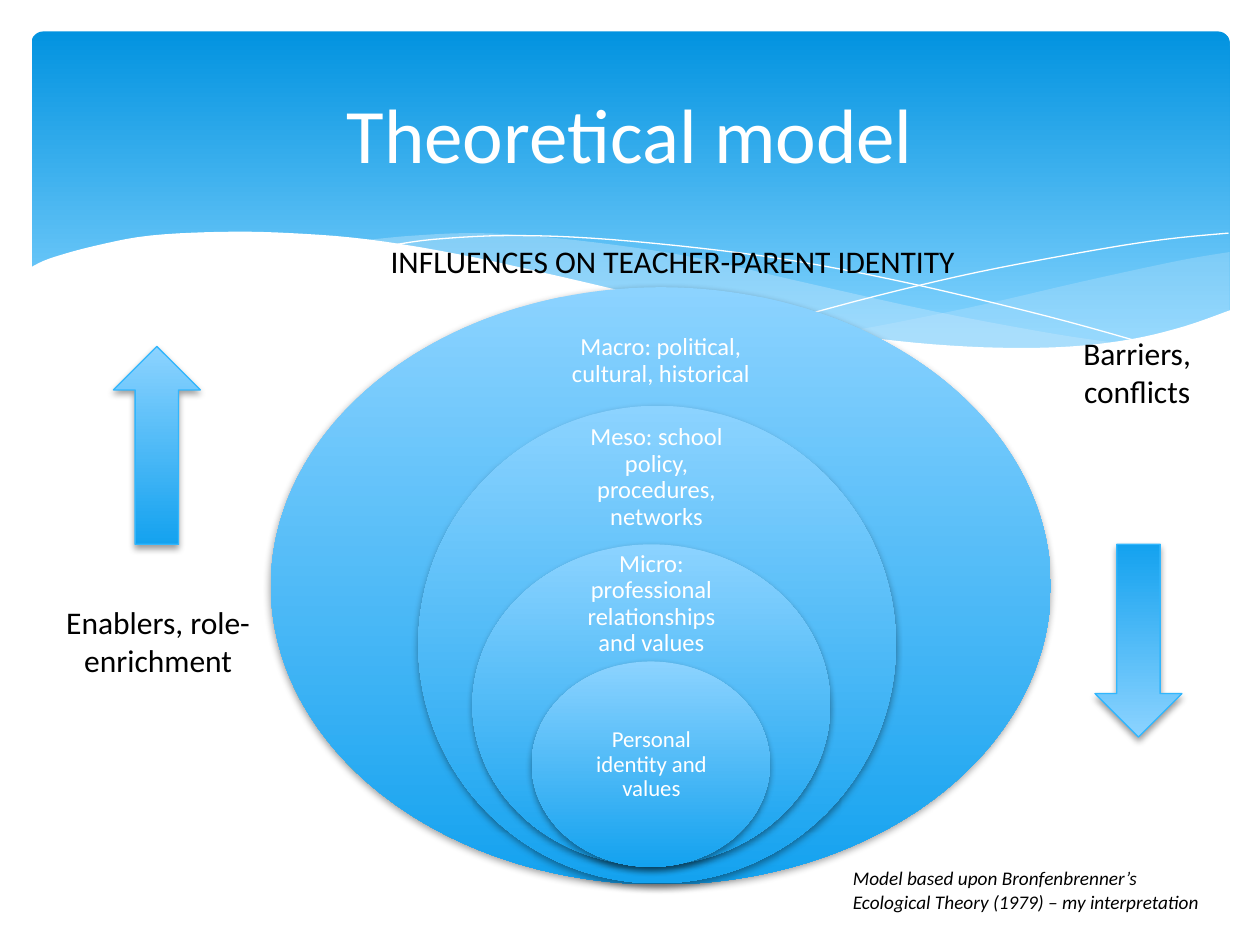
from lxml.etree import SubElement
from pptx import Presentation
from pptx.dml.color import RGBColor
from pptx.enum.shapes import MSO_SHAPE as SHAPE
from pptx.enum.text import MSO_ANCHOR as ANCHOR, PP_ALIGN as ALIGN
from pptx.oxml.ns import qn
from pptx.util import Inches, Pt

LIGHT, DARK, PALE, WHITE, BLACK = "8CD3FF", "14A2EF", "C6E7FC", "FFFFFF", "000000"

VEIL_TOP = [(9.76, 2), (9.35, 2.07), (8.61, 2.23), (7.79, 2.42), (7.06, 2.57), (6.61, 2.65)]
VEIL_BOTTOM = [(6.61, 2.65), (7.05, 2.71), (7.57, 2.76), (8.14, 2.78), (8.63, 2.75),
               (9.13, 2.67), (9.49, 2.57), (9.76, 2.47)]
BAND_TOP = [(8.93, 2.73), (8.37, 2.65), (7.41, 2.47), (6.29, 2.22), (5.69, 2.08),
            (5.14, 1.98), (4.42, 1.89), (3.8, 1.85), (3.28, 1.87), (2.86, 1.91)]
BAND_BOTTOM = [(2.86, 1.91), (3.42, 1.99), (4.04, 2.11), (4.91, 2.32), (5.66, 2.48),
               (6.34, 2.61), (7.09, 2.72), (7.73, 2.77), (8.28, 2.78), (8.93, 2.73)]
FALLING = [(3.09, 1.95), (3.44, 1.9), (4.01, 1.87), (4.69, 1.89), (5.56, 1.97),
           (6.36, 2.08), (7.27, 2.26), (8.31, 2.51), (9.07, 2.72)]
RISING = [(6.13, 2.57), (6.95, 2.35), (7.76, 2.16), (8.66, 1.99), (9.24, 1.9), (9.75, 1.85)]
WAVE = [(9.77, 2.46), (9.4, 2.59), (8.99, 2.69), (8.5, 2.75), (7.93, 2.76), (7.26, 2.72),
        (6.48, 2.62), (5.55, 2.45), (4.47, 2.2), (3.65, 2.02), (2.92, 1.9), (2.3, 1.85),
        (1.77, 1.84), (1.19, 1.87), (0.76, 1.95), (0.4, 2.05), (0.23, 2.13)]


def color(value):
    return RGBColor.from_string(value)


def box(left, top, width, height):
    return [Inches(v) for v in (left, top, width, height)]


def smooth(knots, steps=5):
    ends = [knots[0], *knots, knots[-1]]
    points = [knots[0]]
    for a, b, c, d in zip(ends, ends[1:], ends[2:], ends[3:]):
        for t in (n / steps for n in range(1, steps + 1)):
            points.append(tuple(
                (2 * q + (r - p) * t + (2 * p - 5 * q + 4 * r - s) * t ** 2
                 + (3 * q - p - 3 * r + s) * t ** 3) / 2
                for p, q, r, s in zip(a, b, c, d)))
    return points


def add_path(slide, points, fill=None, alpha=100):
    start, *rest = [(Inches(x), Inches(y)) for x, y in points]
    builder = slide.shapes.build_freeform(*start)
    builder.add_line_segments(rest, close=fill is not None)
    sp = builder.convert_to_shape()
    sp.shadow.inherit = False
    if fill is None:
        sp.fill.background()
        sp.line.color.rgb = color(WHITE)
        sp.line.width = 0
        return
    sp.fill.solid()
    sp.fill.fore_color.rgb = color(fill)
    sp.line.fill.background()
    if alpha < 100:
        rgb = sp._element.spPr.find(f"{qn('a:solidFill')}/{qn('a:srgbClr')}")
        SubElement(rgb, qn("a:alpha"), val=str(alpha * 1000))


def add_gradient_shape(slide, kind, at, top=LIGHT, bottom=DARK, end=1, line=None, shadow=True):
    sp = slide.shapes.add_shape(kind, *box(*at))
    sp.fill.gradient()
    sp.fill.gradient_angle = 270
    for stop, value, position in zip(sp.fill.gradient_stops, (top, bottom), (0, end)):
        stop.color.rgb = color(value)
        stop.position = position
    if line:
        sp.line.color.rgb = color(line)
        sp.line.width = Pt(0.75)
    else:
        sp.line.fill.background()
    sp.shadow.inherit = False
    if shadow:
        effects = sp._element.spPr.find(qn("a:effectLst"))
        outer = SubElement(effects, qn("a:outerShdw"), blurRad=str(Pt(4)), dist=str(Pt(2)),
                           dir="5400000", rotWithShape="0")
        rgb = SubElement(outer, qn("a:srgbClr"), val=BLACK)
        SubElement(rgb, qn("a:alpha"), val="38000")
    return sp


def set_text(tf, text, size, ink=BLACK, align=ALIGN.CENTER, italic=False, spacing=None):
    tf.word_wrap = True
    p = tf.paragraphs[0]
    p.alignment, p.line_spacing = align, spacing
    r = p.add_run()
    r.text = text
    for name, value in {"name": "Calibri", "size": Pt(size), "italic": italic}.items():
        setattr(r.font, name, value)
    r.font.color.rgb = color(ink)


def add_label(slide, at, text, size=18, **style):
    set_text(slide.shapes.add_textbox(*box(*at)).text_frame, text, size, **style)


def add_header(slide, at):
    banner = add_gradient_shape(slide, SHAPE.ROUNDED_RECTANGLE, at, "0293E0", "83D3FE",
                                end=0.9, shadow=False)
    banner.adjustments[0] = 0.034
    add_path(slide, smooth(VEIL_TOP) + smooth(VEIL_BOTTOM), PALE, 29)
    add_path(slide, smooth(BAND_TOP) + smooth(BAND_BOTTOM), PALE, 40)
    add_path(slide, smooth(FALLING))
    add_path(slide, smooth(RISING))
    add_path(slide, smooth(WAVE) + [(0.23, 3.29), (9.77, 3.29)], WHITE)


def add_title(slide, at, text):
    title = slide.shapes.title
    slide.shapes._spTree.append(title._element)
    title.left, title.top, title.width, title.height = box(*at)
    title.text_frame.vertical_anchor = ANCHOR.MIDDLE
    set_text(title.text_frame, text, 44, WHITE)


def add_level(slide, at, text_at, text, size=14, inset=0.11):
    add_gradient_shape(slide, SHAPE.OVAL, at)
    tf = slide.shapes.add_textbox(*box(*text_at)).text_frame
    tf.vertical_anchor = ANCHOR.MIDDLE
    for side in ("left", "top", "right", "bottom"):
        setattr(tf, f"margin_{side}", Inches(inset))
    set_text(tf, text, size, WHITE, spacing=0.9)


def add_model(slide):
    add_level(slide, (2.15, 2.28, 6.19, 4.74), (4.38, 2.51, 1.73, 0.71),
              "Macro: political, cultural, historical")
    add_level(slide, (3.32, 3.22, 3.79, 3.79), (4.55, 3.45, 1.32, 0.68),
              "Meso: school policy, procedures, networks")
    add_level(slide, (3.75, 4.32, 2.84, 2.55), (4.51, 4.51, 1.32, 0.57),
              "Micro: professional relationships and values")
    add_level(slide, (4.22, 5.25, 1.89, 1.63), (4.5, 5.66, 1.34, 0.82),
              "Personal identity and values", 13, 0.1)
    add_label(slide, (2.32, 1.87, 6.04, 0.4), "INFLUENCES ON TEACHER-PARENT IDENTITY")


def add_forces(slide):
    add_gradient_shape(slide, SHAPE.UP_ARROW, (0.9, 2.75, 0.69, 1.57), line="31B6FD")
    add_gradient_shape(slide, SHAPE.DOWN_ARROW, (8.69, 4.32, 0.69, 1.53), DARK, LIGHT,
                       line="31B6FD")
    add_label(slide, (0.41, 4.74, 1.69, 0.71), "Enablers, role-enrichment")
    add_label(slide, (8.18, 2.6, 1.69, 0.71), "Barriers, conflicts")


def main():
    prs = Presentation()
    prs.slide_width, prs.slide_height = Inches(10), Inches(7.5)
    slide = prs.slides.add_slide(prs.slide_layouts[5])
    add_header(slide, (0.25, 0.25, 9.51, 2.7))
    add_title(slide, (0.5, 0.37, 9, 1.37), "Theoretical model")
    add_model(slide)
    add_forces(slide)
    add_label(slide, (6.67, 6.83, 3.02, 0.47),
              "Model based upon Bronfenbrenner’s Ecological Theory (1979) – my interpretation",
              11, align=ALIGN.LEFT, italic=True)
    prs.save("out.pptx")


if __name__ == "__main__":
    main()
